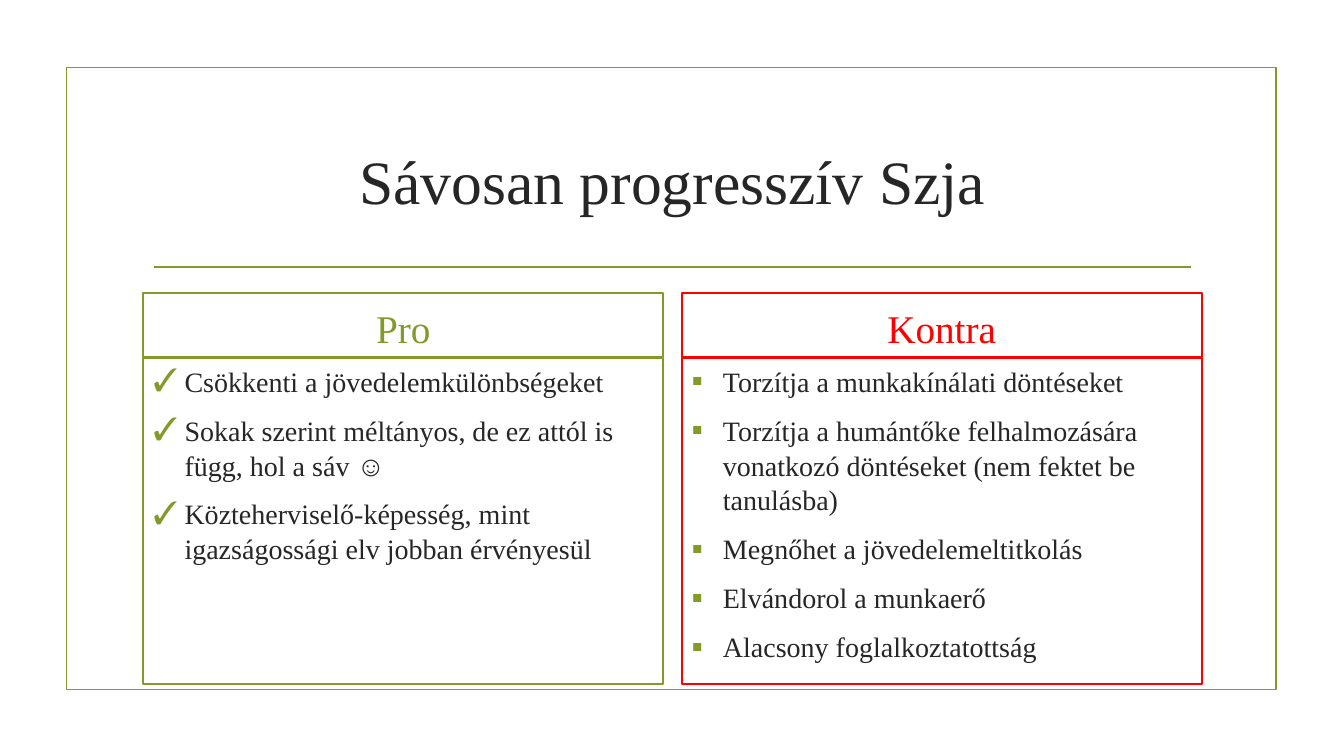
from lxml.etree import SubElement
from pptx import Presentation
from pptx.dml.color import RGBColor
from pptx.enum.shapes import MSO_CONNECTOR, MSO_SHAPE
from pptx.enum.text import MSO_ANCHOR, MSO_AUTO_SIZE, PP_ALIGN
from pptx.oxml.ns import qn
from pptx.util import Inches, Pt

GREEN, RED, DARK = "83992A", "FF0000", "262626"
FONT = "Times New Roman"
WIDTH = 5.16
CENTER = {"alignment": PP_ALIGN.CENTER}
LIST = {"alignment": PP_ALIGN.LEFT, "line_spacing": 1.04, "space_after": Pt(6)}
COLUMNS = [
    (1.42, GREEN, "Pro", "✓", [
        "Csökkenti a jövedelemkülönbségeket",
        "Sokak szerint méltányos, de ez attól is függ, hol a sáv ☺",
        "Közteherviselő-képesség, mint igazságossági elv jobban érvényesül",
    ]),
    (6.76, RED, "Kontra", "▪", [
        "Torzítja a munkakínálati döntéseket",
        "Torzítja a humántőke felhalmozására vonatkozó döntéseket "
        "(nem fektet be tanulásba)",
        "Megnőhet a jövedelemeltitkolás",
        "Elvándorol a munkaerő",
        "Alacsony foglalkoztatottság",
    ]),
]


def apply(target, values):
    """Set every attribute in a dict of format values."""
    for name, value in values.items():
        setattr(target, name, value)


def color(text):
    """Turn a hex string into a colour."""
    return RGBColor.from_string(text)


def outline(shape, shade, width):
    """Give a shape or connector a solid line."""
    shape.line.color.rgb = color(shade)
    shape.line.width = Pt(width)


def place(shape, left, top, width, height):
    """Move and size a shape in inches."""
    apply(shape, {"left": Inches(left), "top": Inches(top),
                  "width": Inches(width), "height": Inches(height)})


def bullet(para, mark):
    """Add a hanging green bullet to a paragraph."""
    props = para._p.get_or_add_pPr()
    props.set("marL", str(Inches(0.31)))
    props.set("indent", str(-Inches(0.31)))
    shade = SubElement(props, qn("a:buClr"))
    SubElement(shade, qn("a:srgbClr"), val=GREEN)
    SubElement(props, qn("a:buSzPct"), val="115000")
    SubElement(props, qn("a:buFont"), typeface=FONT)
    SubElement(props, qn("a:buChar"), char=mark)


def write(shape, lines, size, shade, anchor, form, mark=None):
    """Fill a placeholder with formatted paragraphs."""
    frame = shape.text_frame
    frame.text = "\n".join(lines)
    apply(frame, {"word_wrap": True, "vertical_anchor": anchor,
                  "auto_size": MSO_AUTO_SIZE.NONE})
    for index, para in enumerate(frame.paragraphs):
        if mark:
            bullet(para, mark)
        apply(para, form)
        para.space_before = Pt(4 if index else 0)
        apply(para.font, {"name": FONT, "size": Pt(size), "bold": False})
        para.font.color.rgb = color(shade)


def border(slide):
    """Draw the page frame and the title rule behind the text."""
    shapes = slide.shapes
    frame = shapes.add_shape(MSO_SHAPE.RECTANGLE, Inches(0.66), Inches(0.67),
                             Inches(12), Inches(6.17))
    frame.fill.background()
    frame.shadow.inherit = False
    rule = shapes.add_connector(MSO_CONNECTOR.STRAIGHT, Inches(1.53),
                                Inches(2.65), Inches(11.81), Inches(2.65))
    for item in (rule, frame):
        outline(item, GREEN, 1.25)
        shapes._spTree.insert(2, item._element)
    SubElement(rule._element.spPr, qn("a:effectLst"))


def column(head, body, left, shade, title, mark, lines):
    """Build one headed list with its outlined boxes."""
    place(head, left, 2.91, WIDTH, 0.63)
    place(body, left, 3.55, WIDTH, 3.24)
    for box in (head, body):
        outline(box, shade, 1.5)
    write(head, [title], 28, shade, MSO_ANCHOR.BOTTOM, CENTER)
    write(body, lines, 20, DARK, MSO_ANCHOR.TOP, LIST, mark)


def main():
    """Build and save the slide."""
    deck = Presentation()
    apply(deck, {"slide_width": Inches(13.33), "slide_height": Inches(7.5)})
    slide = deck.slides.add_slide(deck.slide_layouts[4])
    border(slide)
    title = slide.shapes.title
    place(title, 1.42, 1.07, 10.5, 1.43)
    write(title, ["Sávosan progresszív Szja"], 44, DARK,
          MSO_ANCHOR.MIDDLE, CENTER)
    holders = slide.placeholders
    for index, content in enumerate(COLUMNS):
        column(holders[2 * index + 1], holders[2 * index + 2], *content)
    deck.save("out.pptx")


if __name__ == "__main__":
    main()
